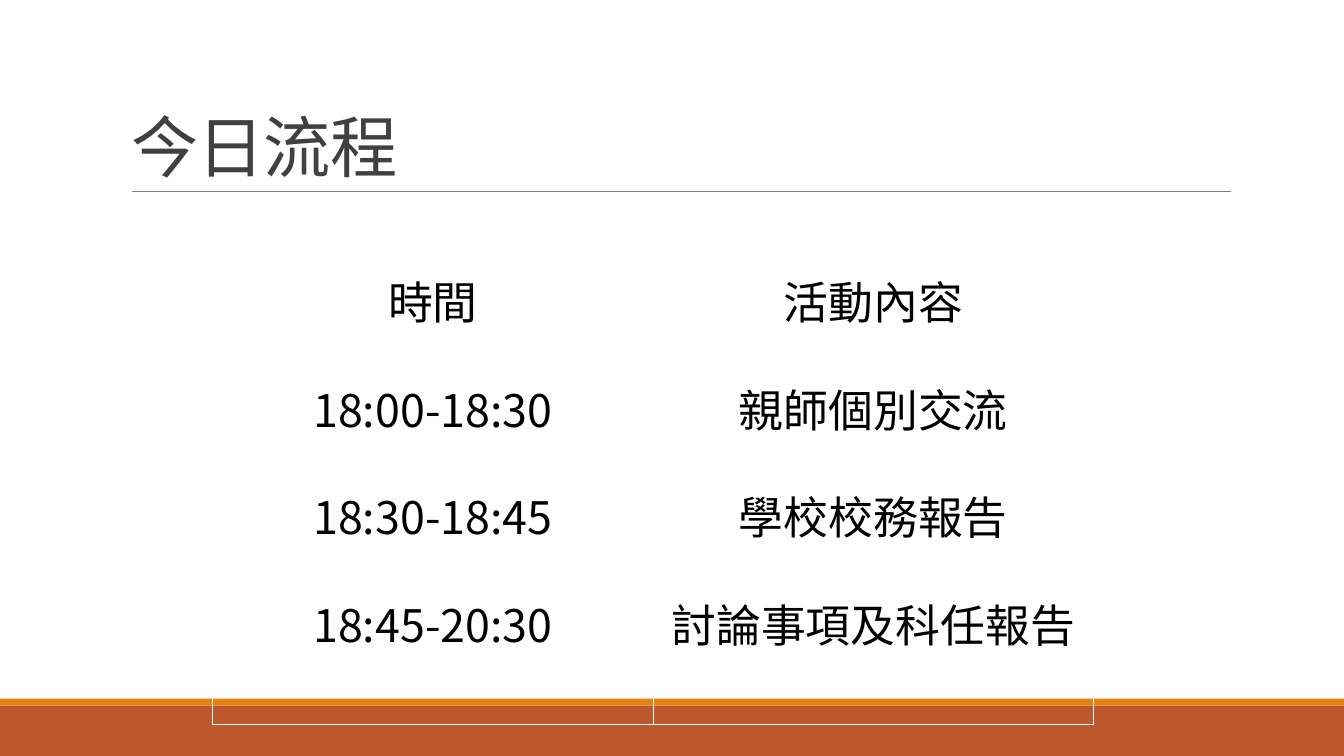
from lxml import etree
from pptx import Presentation
from pptx.dml.color import RGBColor
from pptx.enum.shapes import MSO_CONNECTOR, MSO_SHAPE
from pptx.enum.text import MSO_ANCHOR, MSO_AUTO_SIZE, PP_ALIGN
from pptx.oxml.ns import qn
from pptx.util import Pt

LEFT, CENTER = PP_ALIGN.LEFT, PP_ALIGN.CENTER
TOP, BOTTOM = MSO_ANCHOR.TOP, MSO_ANCHOR.BOTTOM
NO_AUTOFIT = MSO_AUTO_SIZE.NONE
RECTANGLE = MSO_SHAPE.RECTANGLE
STRAIGHT = MSO_CONNECTOR.STRAIGHT

FONT = "Noto Sans CJK SC"
COLORS = {
    "title": "404040",
    "body": "000000",
    "rule": "808080",
    "footer": "BD582C",
    "accent": "E48312",
}
SLIDE_WIDTH, SLIDE_HEIGHT = 960, 540
SCHEDULE = [
    ("時間", "活動內容"),
    ("18:00-18:30", "親師個別交流"),
    ("18:30-18:45", "學校校務報告"),
    ("18:45-20:30", "討論事項及科任報告"),
]
ROW_HEIGHTS = [64.8, 64.8, 64.8, 122.4]
COLUMN_WIDTH = 314.6


def color(name):
    """Return the named colour of the palette."""
    return RGBColor.from_string(COLORS[name])


def write_text(text_frame, text, *, size, color_name, align=LEFT,
               line_spacing=1.0, tracking=None):
    """Write one formatted paragraph into a text frame."""
    paragraph = text_frame.paragraphs[0]
    paragraph.alignment = align
    paragraph.line_spacing = line_spacing
    run = paragraph.add_run()
    run.text = text
    run.font.size = Pt(size)
    run.font.bold = False
    run.font.color.rgb = color(color_name)
    run.font.name = FONT
    properties = run.font._element if hasattr(run.font, "_element") else run._r.get_or_add_rPr()
    etree.SubElement(properties, qn("a:ea"), typeface=FONT)
    if tracking is not None:
        properties.set("spc", str(round(tracking * 100)))


def add_band(slide, top, height, color_name):
    """Add a full-width coloured band."""
    band = slide.shapes.add_shape(
        RECTANGLE, Pt(0), Pt(top), Pt(SLIDE_WIDTH), Pt(height))
    band.shadow.inherit = False
    band.fill.solid()
    band.fill.fore_color.rgb = color(color_name)
    band.line.fill.background()


def add_rule(slide, left, right, top):
    """Add the thin horizontal line under the title."""
    rule = slide.shapes.add_connector(
        STRAIGHT, Pt(left), Pt(top), Pt(right), Pt(top))
    rule.line.width = Pt(0.5)
    rule.line.color.rgb = color("rule")
    etree.SubElement(rule._element.spPr, qn("a:effectLst"))


def set_title(slide, text):
    """Place and fill the title placeholder."""
    title = slide.shapes.title
    title.left, title.top = Pt(86.4), Pt(22.4)
    title.width, title.height = Pt(792), Pt(114.4)
    text_frame = title.text_frame
    text_frame.auto_size = NO_AUTOFIT
    text_frame.vertical_anchor = BOTTOM
    write_text(text_frame, text, size=48, color_name="title",
               line_spacing=0.85, tracking=-0.5)


def add_schedule(slide, left, top):
    """Add the table of times and activities."""
    column_count = len(SCHEDULE[0])
    frame = slide.shapes.add_table(
        len(SCHEDULE), column_count, Pt(left), Pt(top),
        Pt(COLUMN_WIDTH * column_count), Pt(sum(ROW_HEIGHTS)))
    table = frame.table
    table.first_row = False
    table.horz_banding = False
    for column in table.columns:
        column.width = Pt(COLUMN_WIDTH)
    for row, height, texts in zip(table.rows, ROW_HEIGHTS, SCHEDULE):
        row.height = Pt(height)
        for cell, text in zip(row.cells, texts):
            cell.fill.background()
            cell.vertical_anchor = TOP
            write_text(cell.text_frame, text, size=32, color_name="body",
                       align=CENTER, line_spacing=1.5)


def main():
    """Build the schedule slide and save it."""
    presentation = Presentation()
    presentation.slide_width = Pt(SLIDE_WIDTH)
    presentation.slide_height = Pt(SLIDE_HEIGHT)
    slide = presentation.slides.add_slide(presentation.slide_layouts[5])
    add_band(slide, 504, 36, "footer")
    add_band(slide, 499, 5, "accent")
    add_rule(slide, 94.3, 879, 136.8)
    set_title(slide, "今日流程")
    add_schedule(slide, 152, 164.2)
    presentation.save("out.pptx")


if __name__ == "__main__":
    main()
